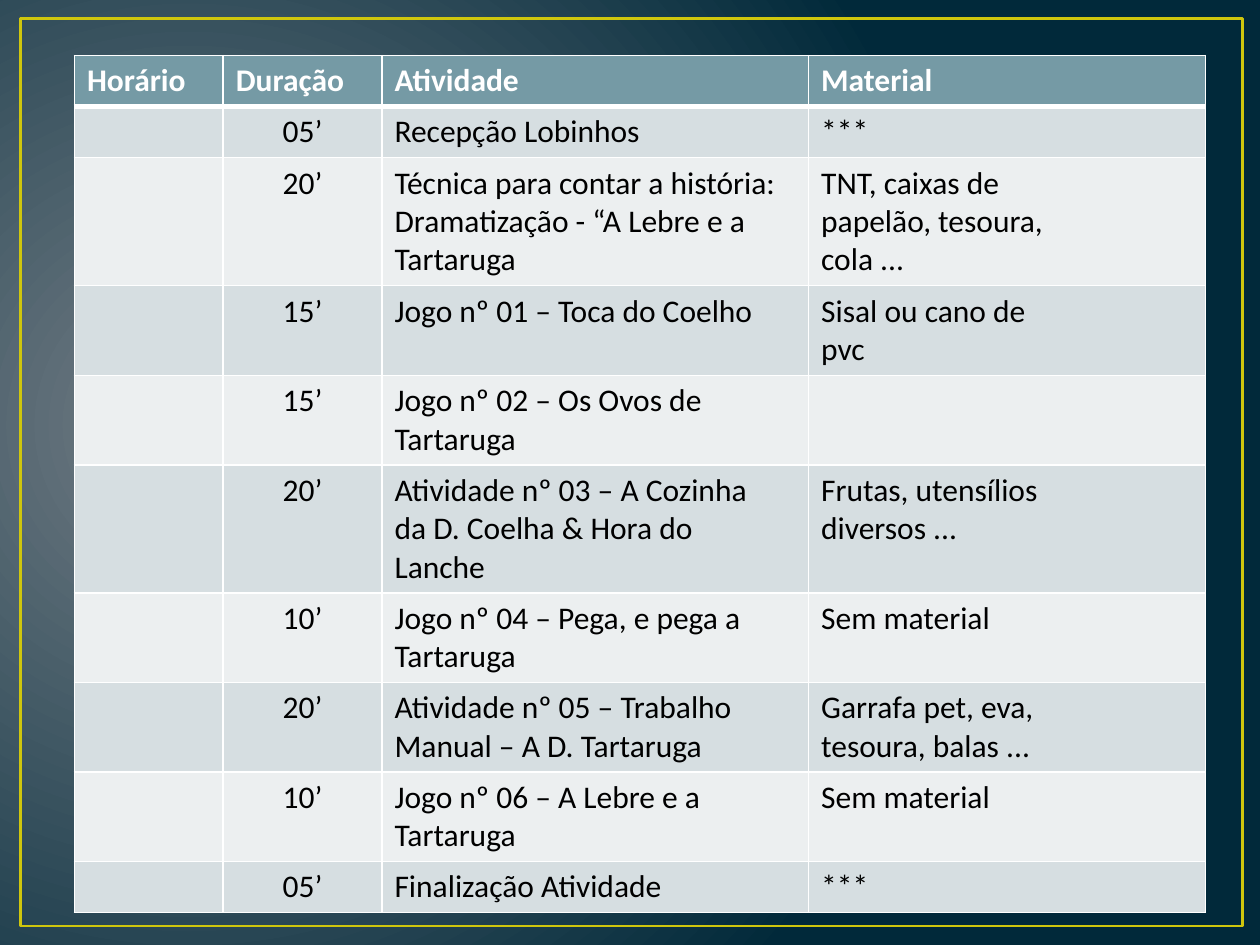
from pptx import Presentation
from pptx.dml.color import RGBColor
from pptx.enum.shapes import MSO_SHAPE
from pptx.enum.text import PP_ALIGN
from pptx.oxml import parse_xml
from pptx.oxml.ns import nsdecls, qn
from pptx.util import Cm, Pt

# Content: time, duration, activity and material; a line break starts a paragraph
HEADINGS = ("Horário", "Duração", "Atividade", "Material")
ACTIVITIES = [
    ("", "05’", "Recepção Lobinhos", "***"),
    ("", "20’", "Técnica para contar a história:\nDramatização - “A Lebre e a\nTartaruga",
     "TNT, caixas de\npapelão, tesoura,\ncola ..."),
    ("", "15’", "Jogo nº 01 – Toca do Coelho", "Sisal ou cano de\npvc"),
    ("", "15’", "Jogo nº 02 – Os Ovos de\nTartaruga", ""),
    ("", "20’", "Atividade nº 03 – A Cozinha\nda D. Coelha & Hora do\nLanche",
     "Frutas, utensílios\ndiversos ..."),
    ("", "10’", "Jogo nº 04 – Pega, e pega a\nTartaruga", "Sem material"),
    ("", "20’", "Atividade nº 05 – Trabalho\nManual – A D. Tartaruga",
     "Garrafa pet, eva,\ntesoura, balas ..."),
    ("", "10’", "Jogo nº 06 – A Lebre e a\nTartaruga", "Sem material"),
    ("", "05’", "Finalização Atividade", "***"),
]
COLUMN_WIDTHS = (3, 3.2, 8.6, 8)
ROW_HEIGHT = 1.03
DURATION_COLUMN = 1
HEADING_FILL = "759AA5"
BAND_FILLS = ("D6DEE1", "ECEFF0")
BACKGROUND = ("717C84", "01293A")


def color(hex_string):
    return RGBColor.from_string(hex_string)


def write(text_frame, text, font="Calibri", size=18, ink="000000", bold=False,
          align=PP_ALIGN.LEFT):
    text_frame.text = text
    for paragraph in text_frame.paragraphs:
        paragraph.alignment = align
        paragraph.font.size = Pt(size)
        for run in paragraph.runs:
            run.font.name = font
            run.font.size = Pt(size)
            run.font.bold = bold
            run.font.color.rgb = color(ink)


def set_borders(cell, bottom=1, top=1):
    properties = cell._tc.get_or_add_tcPr()
    widths = {"lnL": 1, "lnR": 1, "lnT": top, "lnB": bottom}
    for position, (side, width) in enumerate(widths.items()):
        properties.insert(position, parse_xml(
            f'<a:{side} {nsdecls("a")} w="{Pt(width)}"><a:solidFill>'
            f'<a:srgbClr val="FFFFFF"/></a:solidFill></a:{side}>'))


def paint_background(slide):
    fill = slide.background.fill
    fill.gradient()
    for stop, position, hex_string in zip(fill.gradient_stops, (0, 1), BACKGROUND):
        stop.position = position
        stop.color.rgb = color(hex_string)
    # Turn the linear gradient into a circular one
    linear = next(slide._element.iter(qn("a:lin")))
    linear.getparent().replace(linear, parse_xml(
        f'<a:path {nsdecls("a")} path="circle">'
        '<a:fillToRect l="15000" t="50000" r="85000" b="60000"/></a:path>'))


def add_frame(slide):
    frame = slide.shapes.add_shape(
        MSO_SHAPE.RECTANGLE, Cm(0.41), Cm(0.38), Cm(24.64), Cm(18.29))
    frame.shadow.inherit = False
    frame.fill.background()
    frame.line.color.rgb = color("CFC60D")
    frame.line.width = Pt(1.5)


def add_schedule(slide):
    rows = [HEADINGS, *ACTIVITIES]
    table = slide.shapes.add_table(
        len(rows), len(HEADINGS), Cm(1.5), Cm(1.12),
        Cm(sum(COLUMN_WIDTHS)), Cm(ROW_HEIGHT * len(rows))).table
    for column, width in zip(table.columns, COLUMN_WIDTHS):
        column.width = Cm(width)
    for row_index, row in enumerate(rows):
        table.rows[row_index].height = Cm(ROW_HEIGHT)
        heading = row_index == 0
        for column_index, text in enumerate(row):
            cell = table.cell(row_index, column_index)
            cell.fill.solid()
            cell.fill.fore_color.rgb = color(
                HEADING_FILL if heading else BAND_FILLS[(row_index - 1) % 2])
            set_borders(cell, bottom=3 if heading else 1, top=3 if row_index == 1 else 1)
            centered = column_index == DURATION_COLUMN and not heading
            write(cell.text_frame, text, bold=heading,
                  ink="FFFFFF" if heading else "000000",
                  align=PP_ALIGN.CENTER if centered else PP_ALIGN.LEFT)


def main():
    presentation = Presentation()
    presentation.slide_width, presentation.slide_height = Cm(25.4), Cm(19.05)
    slide = presentation.slides.add_slide(presentation.slide_layouts[6])
    paint_background(slide)
    add_frame(slide)
    add_schedule(slide)
    presentation.save("out.pptx")


if __name__ == "__main__":
    main()
